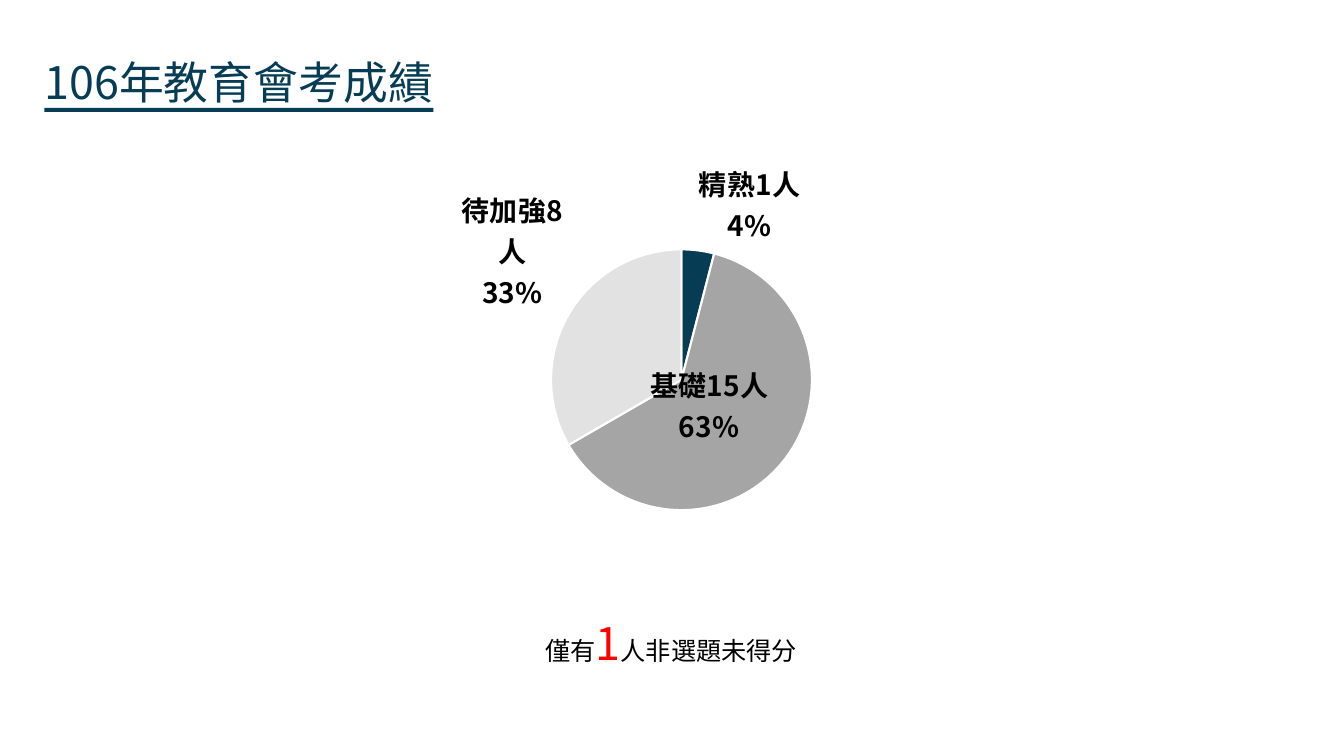
"""Build a one-slide deck showing exam results as a pie chart."""
from copy import deepcopy
from dataclasses import dataclass

from lxml import etree
from pptx import Presentation
from pptx.chart.data import CategoryChartData
from pptx.dml.color import RGBColor
from pptx.enum import chart as charts, shapes, text
from pptx.oxml import ns
from pptx.util import Inches, Pt


@dataclass(frozen=True)
class Theme:
    """Colours, fonts and type sizes of the slide."""
    navy: str = "063D54"
    grey: str = "A5A5A5"
    pale: str = "E2E2E2"
    white: str = "FFFFFF"
    black: str = "000000"
    red: str = "FF0000"
    heading_font: str = "Noto Sans CJK TC"
    note_font: str = "Noto Sans CJK SC"
    large: int = 32
    label: int = 20
    note: int = 18


THEME = Theme()
RESULTS = [("精熟1人", 4, THEME.navy),
           ("基礎15人", 62, THEME.grey),
           ("待加強8人", 33, THEME.pale)]


def style_font(font, name, size, color, bold=False):
    """Set a font for both Latin and East Asian letters."""
    font.name, font.size, font.bold = name, Pt(size), bold
    font.color.rgb = RGBColor.from_string(color)
    latin = font._element.find(ns.qn("a:latin"))
    east_asian = etree.Element(ns.qn("a:ea"), typeface=name)
    latin.addnext(east_asian)


def place(shape, left, top, width, height):
    """Move a shape to a position in inches."""
    shape.left, shape.top = Inches(left), Inches(top)
    shape.width, shape.height = Inches(width), Inches(height)


def manual_layout(**fractions):
    """Return a chart layout element from its named fractions."""
    layout = etree.Element(ns.qn("c:layout"))
    manual = etree.SubElement(layout, ns.qn("c:manualLayout"))
    for name, value in fractions.items():
        etree.SubElement(manual, ns.qn(f"c:{name}"), val=str(value))
    return layout


def add_title(page, title):
    """Fill the title placeholder and underline it."""
    box = page.shapes.title
    place(box, 0.44, 0.44, 4.36, 0.65)
    frame = box.text_frame
    frame.text = title
    frame.margin_left = frame.margin_top = frame.margin_right = 0
    frame.vertical_anchor = text.MSO_ANCHOR.TOP
    frame.auto_size = text.MSO_AUTO_SIZE.SHAPE_TO_FIT_TEXT
    para = frame.paragraphs[0]
    para.alignment = text.PP_ALIGN.LEFT
    para.line_spacing = 1.2
    style_font(para.runs[0].font, THEME.heading_font, THEME.large, THEME.navy)

    rule = page.shapes.add_shape(
        shapes.MSO_SHAPE.RECTANGLE,
        Inches(0.44), Inches(1.07), Inches(3.86), Inches(0.04))
    rule.shadow.inherit = False
    rule.fill.solid()
    rule.fill.fore_color.rgb = RGBColor.from_string(THEME.navy)
    rule.line.fill.background()


def label_slices(series):
    """Label each slice with name and share, moving the largest inside."""
    labels = series.data_labels
    labels.show_value = False
    labels.show_category_name = labels.show_percentage = True
    labels.number_format, labels.number_format_is_linked = "0%", False
    labels.position = charts.XL_LABEL_POSITION.OUTSIDE_END
    style_font(labels.font, THEME.heading_font, THEME.label, THEME.black, True)
    element = labels._element
    separator = etree.Element(ns.qn("c:separator"))
    separator.text = "\n"
    element.find(ns.qn("c:showBubbleSize")).addnext(separator)

    inner = etree.Element(ns.qn("c:dLbl"))
    etree.SubElement(inner, ns.qn("c:idx"), val="1")
    inner.append(manual_layout(x=-0.22, y=-0.21))
    for child in element:
        if child.tag != ns.qn("c:showLeaderLines"):
            inner.append(deepcopy(child))
    element.insert(0, inner)


def add_pie(page):
    """Add the pie chart of results."""
    data = CategoryChartData()
    data.categories = [name for name, _, _ in RESULTS]
    data.add_series("Series 1", [share for _, share, _ in RESULTS])
    chart = page.shapes.add_chart(
        charts.XL_CHART_TYPE.PIE, Inches(3.51), Inches(1.43),
        Inches(6.31), Inches(4.63), data).chart
    chart.has_legend = chart.has_title = False
    style_font(chart.font, THEME.heading_font, THEME.label, THEME.black, True)
    plot = chart.plots[0]
    plot.vary_by_categories = True
    series = plot.series[0]
    for index, (_, _, color) in enumerate(RESULTS):
        piece = series.points[index].format
        piece.fill.solid()
        piece.fill.fore_color.rgb = RGBColor.from_string(color)
        piece.line.color.rgb = RGBColor.from_string(THEME.white)
        piece.line.width = Pt(1.5)
    label_slices(series)
    area = chart._chartSpace.chart.plotArea
    for layout in area.findall(ns.qn("c:layout")):
        area.remove(layout)
    area.insert(0, manual_layout(
        layoutTarget="inner", xMode="edge", yMode="edge",
        x=0.31, y=0.22, w=0.41, h=0.57))


def add_note(page, spans):
    """Add a note made of (words, size, colour) spans."""
    box = page.shapes.add_textbox(
        Inches(5.31), Inches(6.06), Inches(2.72), Inches(0.64))
    frame = box.text_frame
    frame.word_wrap = True
    frame.auto_size = text.MSO_AUTO_SIZE.SHAPE_TO_FIT_TEXT
    para = frame.paragraphs[0]
    for words, size, color in spans:
        span = para.add_run()
        span.text = words
        style_font(span.font, THEME.note_font, size, color)


def main():
    """Build and save the deck."""
    deck = Presentation()
    deck.slide_width, deck.slide_height = Inches(13.33), Inches(7.5)
    page = deck.slides.add_slide(deck.slide_layouts.get_by_name("Title Only"))
    add_pie(page)
    add_note(page, [("僅有", THEME.note, THEME.black),
                    ("1", THEME.large, THEME.red),
                    ("人非選題未得分", THEME.note, THEME.black)])
    add_title(page, "106年教育會考成績")
    deck.save("out.pptx")


if __name__ == "__main__":
    main()
